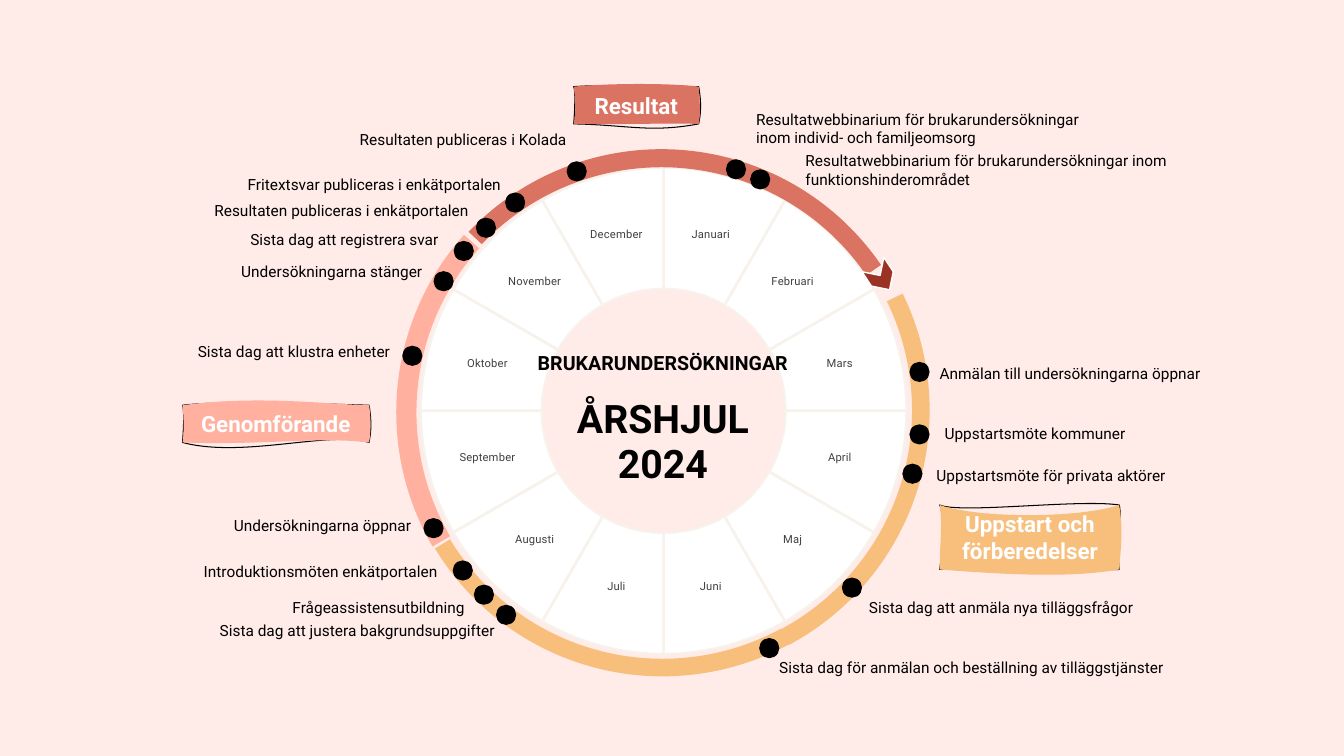
from typing import Any, NamedTuple

from lxml import etree
from pptx import Presentation, util as u
from pptx.chart.data import CategoryChartData
from pptx.dml.color import RGBColor
from pptx.enum import chart as ch, shapes, text
from pptx.oxml.ns import qn

FONT = "Roboto"
BLACK, WHITE = "000000", "FFFFFF"
AMBER, PINK, RED, DARK_RED = "F8BE7C", "FFB09E", "DB7363", "9A3324"
WHEEL_CENTER_X = 6.56
DOT_SIZE = 0.2
MONTHS = ("Januari", "Februari", "Mars", "April", "Maj", "Juni", "Juli", "Augusti",
          "September", "Oktober", "November", "December")
Point = tuple[float, float]
Curve = list[Point]


class Phase(NamedTuple):
    left: float
    top: float
    start: float
    end: float
    thickness: float
    color: str


class Banner(NamedTuple):
    caption: str
    left: float
    top: float
    width: float
    height: float
    color: str
    outline: Curve
    body: Curve


class Event(NamedTuple):
    caption: str
    dot_x: float
    dot_y: float
    label_edge: float
    label_top: float
    label_width: float = 3.6


PHASES = [
    Phase(3.94, 1.43, 334, 62, 0.033, AMBER),
    Phase(3.93, 1.45, 149.7, 221.8, 0.038, PINK),
    Phase(3.93, 1.43, 61.5, 148.7, 0.033, AMBER),
    Phase(3.92, 1.48, 223.6, 325.6, 0.034, RED),
]
BANNERS = [
    Banner("Uppstart och förberedelser", 9.32, 5.01, 1.79, 0.64, AMBER,
           [(9.32, 5.01), (9.52, 5.1), (10.7, 4.95), (11.1, 5.01), (11.13, 5.09), (11.08, 5.49),
            (11.1, 5.65), (10.81, 5.66), (9.83, 5.54), (9.32, 5.65), (9.35, 5.42), (9.37, 5.13),
            (9.32, 5.01)],
           [(9.32, 5.01), (9.73, 5.15), (10.71, 5.14), (11.1, 5.01), (11.14, 5.27), (11.12, 5.39),
            (11.1, 5.65), (10.7, 5.72), (10.19, 5.72), (9.32, 5.65), (9.32, 5.38), (9.35, 5.23),
            (9.32, 5.01)]),
    Banner("Genomförande", 1.81, 4.02, 1.85, 0.37, PINK,
           [(1.81, 4.02), (2.23, 3.97), (3.27, 4.01), (3.66, 4.02), (3.69, 4.19), (3.68, 4.29),
            (3.66, 4.39), (3.27, 4.27), (2.41, 4.55), (1.81, 4.39), (1.82, 4.28), (1.83, 4.06),
            (1.81, 4.02)],
           [(1.81, 4.02), (2.55, 3.92), (3.23, 4.01), (3.66, 4.02), (3.68, 4.12), (3.68, 4.31),
            (3.66, 4.39), (3.15, 4.33), (2.61, 4.42), (1.81, 4.39), (1.83, 4.3), (1.82, 4.09),
            (1.81, 4.02)]),
    Banner("Resultat", 5.69, 0.86, 1.24, 0.37, RED,
           [(5.69, 0.86), (6.1, 0.83), (6.64, 0.88), (6.93, 0.86), (6.96, 1.03), (6.95, 1.13),
            (6.93, 1.23), (6.45, 1.32), (6.23, 1.24), (5.69, 1.23), (5.7, 1.12), (5.71, 0.9),
            (5.69, 0.86)],
           [(5.69, 0.86), (6.1, 0.82), (6.73, 0.83), (6.93, 0.86), (6.94, 0.96), (6.95, 1.15),
            (6.93, 1.23), (6.59, 1.22), (5.99, 1.24), (5.69, 1.23), (5.72, 1.14), (5.7, 0.93),
            (5.69, 0.86)]),
]
EVENTS = [
    Event("Resultatwebbinarium för brukarundersökningar inom individ- och familjeomsorg",
          7.2, 1.58, 7.4, 1.04, 3.58),
    Event("Resultatwebbinarium för brukarundersökningar inom funktionshinderområdet",
          7.44, 1.68, 7.89, 1.45, 3.85),
    Event("Anmälan till undersökningarna öppnar", 9.02, 3.59, 9.22, 3.56),
    Event("Uppstartsmöte kommuner", 9.02, 4.21, 9.27, 4.16),
    Event("Uppstartsmöte för privata aktörer", 8.95, 4.6, 9.19, 4.57),
    Event("Sista dag att anmäla nya tilläggsfrågor", 8.35, 5.73, 8.52, 5.88),
    Event("Sista dag för anmälan och beställning av tilläggstjänster",
          7.53, 6.33, 7.63, 6.48, 4.72),
    Event("Sista dag att justera bakgrundsuppgifter", 4.92, 6, 5.01, 6.11),
    Event("Frågeassistensutbildning", 4.7, 5.8, 4.71, 5.88),
    Event("Introduktionsmöten enkätportalen", 4.49, 5.56, 4.44, 5.53),
    Event("Undersökningarna öppnar", 4.2, 5.14, 4.18, 5.07),
    Event("Sista dag att klustra enheter", 3.99, 3.43, 3.97, 3.34),
    Event("Undersökningarna stänger", 4.3, 2.69, 4.29, 2.55),
    Event("Sista dag att registrera svar", 4.5, 2.39, 4.45, 2.23),
    Event("Resultaten publiceras i enkätportalen", 4.72, 2.16, 4.75, 1.95),
    Event("Fritextsvar publiceras i enkätportalen", 5.01, 1.91, 5.07, 1.69),
    Event("Resultaten publiceras i Kolada", 5.62, 1.6, 5.72, 1.24),
]


def rgb(value: str) -> RGBColor:
    return RGBColor.from_string(value)


def inches(*lengths: float) -> list[u.Length]:
    return [u.Inches(length) for length in lengths]


def apply(target: Any, values: dict[str, Any]) -> None:
    for attribute, value in values.items():
        setattr(target, attribute, value)


def set_font(font: Any, size: float, color: str, bold: bool = False) -> None:
    apply(font, {"name": FONT, "size": u.Pt(size), "bold": bold})
    font.color.rgb = rgb(color)


def paint(surface: Any, fill: str, line: str = "", width: float = 1) -> None:
    surface.fill.solid()
    surface.fill.fore_color.rgb = rgb(fill)
    if line:
        surface.line.color.rgb = rgb(line)
        surface.line.width = u.Pt(width)
    else:
        surface.line.fill.background()


def add_preset(slide: Any, preset: Any, box: tuple[float, ...], fill: str, line: str = "") -> Any:
    shape = slide.shapes.add_shape(preset, *inches(*box))
    shape.shadow.inherit = False
    paint(shape, fill, line)
    return shape


def add_month_wheel(slide: Any) -> None:
    months = CategoryChartData()
    months.categories = MONTHS
    months.add_series("Series 1", [8] * len(MONTHS))
    wheel = slide.shapes.add_chart(
        ch.XL_CHART_TYPE.DOUGHNUT, *inches(2.62, 1.19, 6.38, 5.82), months).chart
    apply(wheel, {"has_legend": False, "has_title": False})
    set_font(wheel.font, 10, BLACK)
    plot = wheel.plots[0]
    plot.vary_by_categories = False
    ring = plot.series[0]
    segments = [ring.points[index] for index in range(len(MONTHS))]
    for surface in (ring, *segments):
        paint(surface.format, WHITE, "F7F2EB", 1.5)
    names = ring.data_labels
    apply(names, {"show_category_name": True, "show_value": False, "show_percentage": False})
    set_font(names.font, 8, "404040")
    explosion = etree.Element(qn("c:explosion"), val="1")
    ring._element.find(qn("c:spPr")).addnext(explosion)
    area = wheel._chartSpace.find(".//" + qn("c:plotArea"))
    area.find(".//" + qn("c:holeSize")).set("val", "75")
    for old_layout in area.findall(qn("c:layout")):
        area.remove(old_layout)
    layout = etree.Element(qn("c:layout"))
    manual = etree.SubElement(layout, qn("c:manualLayout"))
    for tag, value in (("layoutTarget", "inner"), ("xMode", "edge"), ("yMode", "edge"),
                       ("x", "0.244"), ("y", "0.077"), ("w", "0.756"), ("h", "0.838")):
        etree.SubElement(manual, qn(f"c:{tag}"), val=value)
    area.insert(0, layout)


def add_phase(slide: Any, phase: Phase) -> None:
    arc = add_preset(slide, shapes.MSO_SHAPE.BLOCK_ARC,
                     (phase.left, phase.top, 5.28, 5.28), phase.color)
    for index, value in enumerate((phase.start * 0.6, phase.end * 0.6, phase.thickness)):
        arc.adjustments[index] = value


def add_curve(paths: Any, banner: Banner, curve: Curve, hidden: dict[str, str]) -> None:
    size = {"w": str(u.Inches(banner.width)), "h": str(u.Inches(banner.height))}
    outline = etree.SubElement(paths, qn("a:path"), {**size, **hidden})
    steps = [("moveTo", curve[:1])]
    steps += [("cubicBezTo", curve[i:i + 3]) for i in range(1, len(curve), 3)]
    for tag, points in steps:
        step = etree.SubElement(outline, qn(f"a:{tag}"))
        for x, y in points:
            etree.SubElement(step, qn("a:pt"), x=str(u.Inches(x - banner.left)),
                             y=str(u.Inches(y - banner.top)))
    etree.SubElement(outline, qn("a:close"))


def add_banner(slide: Any, banner: Banner) -> None:
    left, top, width, height = inches(*banner[1:5])
    builder = slide.shapes.build_freeform(left, top)
    builder.add_line_segments(
        [(left + width, top), (left + width, top + height), (left, top + height)])
    ribbon = builder.convert_to_shape()
    paths = ribbon._element.find(".//" + qn("a:pathLst"))
    for corner_path in list(paths):
        paths.remove(corner_path)
    add_curve(paths, banner, banner.outline, {"fill": "none"})
    add_curve(paths, banner, banner.body, {"stroke": "0"})
    ribbon.shadow.inherit = False
    paint(ribbon, banner.color, BLACK, 0.75)
    frame = ribbon.text_frame
    apply(frame, {"text": banner.caption, "word_wrap": True,
                  "vertical_anchor": text.MSO_ANCHOR.MIDDLE})
    frame.paragraphs[0].alignment = text.PP_ALIGN.CENTER
    set_font(frame.paragraphs[0].runs[0].font, 16, WHITE, True)


def add_event(slide: Any, event: Event) -> None:
    add_preset(slide, shapes.MSO_SHAPE.OVAL,
               (event.dot_x, event.dot_y, DOT_SIZE, DOT_SIZE), BLACK)
    on_left = event.dot_x < WHEEL_CENTER_X
    left = event.label_edge - event.label_width * on_left
    label = slide.shapes.add_textbox(*inches(left, event.label_top, event.label_width, 0.29))
    apply(label.text_frame, {"text": event.caption, "word_wrap": True})
    paragraph = label.text_frame.paragraphs[0]
    paragraph.alignment = text.PP_ALIGN.RIGHT if on_left else text.PP_ALIGN.LEFT
    set_font(paragraph.runs[0].font, 11, BLACK)


def place_title(slide: Any) -> None:
    title = slide.shapes.title
    apply(title, dict(zip(("left", "top", "width", "height"), inches(5.05, 3.45, 3.05, 1.3))))
    frame = title.text_frame
    apply(frame, {"text": "BRUKARUNDERSÖKNINGAR\nÅRSHJUL\n2024", "word_wrap": True,
                  "auto_size": text.MSO_AUTO_SIZE.NONE, "vertical_anchor": text.MSO_ANCHOR.TOP})
    for paragraph, size, gap in zip(frame.paragraphs, (14, 28, 28), (0, 16, 0)):
        apply(paragraph, {"alignment": text.PP_ALIGN.CENTER, "line_spacing": 0.95,
                          "space_before": u.Pt(gap)})
        set_font(paragraph.runs[0].font, size, BLACK, True)
    slide.shapes._spTree.append(title._element)


def main() -> None:
    """Build the yearly wheel of user surveys."""
    deck = Presentation()
    apply(deck, {"slide_width": u.Inches(13.33), "slide_height": u.Inches(7.5)})
    slide = deck.slides.add_slide(deck.slide_layouts.get_by_name("Title Only"))
    slide.background.fill.solid()
    slide.background.fill.fore_color.rgb = rgb("FFEBE8")
    add_month_wheel(slide)
    for phase in PHASES:
        add_phase(slide, phase)
    arrow = add_preset(slide, shapes.MSO_SHAPE.CHEVRON, (8.59, 2.62, 0.3, 0.26), DARK_RED, WHITE)
    arrow.rotation = 56.5
    for banner in BANNERS:
        add_banner(slide, banner)
    place_title(slide)
    for event in EVENTS:
        add_event(slide, event)
    deck.save("out.pptx")


if __name__ == "__main__":
    main()
